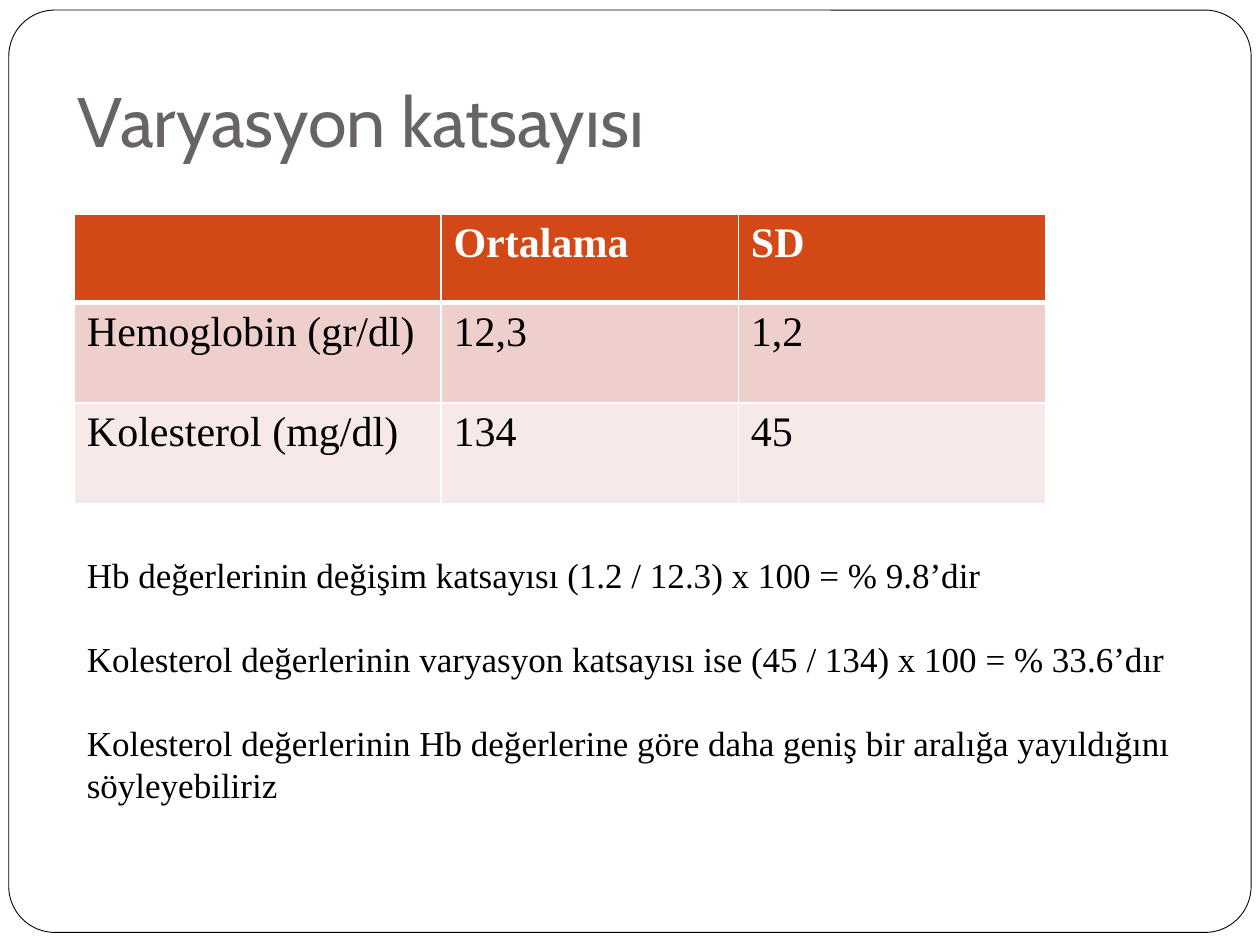
from dataclasses import dataclass

from lxml import etree
from pptx import Presentation
from pptx.dml.color import RGBColor
from pptx.enum import shapes, text
from pptx.oxml import ns
from pptx.util import Inches, Pt


@dataclass(frozen=True)
class Theme:
    white: RGBColor = RGBColor.from_string("FFFFFF")
    black: RGBColor = RGBColor.from_string("000000")
    grey: RGBColor = RGBColor.from_string("696464")
    row_fills: tuple = tuple(map(RGBColor.from_string, ("D34817", "EFCFCC", "F7E9E8")))
    title_font: str = "Cabin"
    body_font: str = "Times New Roman"
    title_size: Pt = Pt(40)
    table_size: Pt = Pt(24)
    body_size: Pt = Pt(20)
    body_leading: Pt = Pt(24)


theme = Theme()


def add_run(p, words, font, size, color, bold=False):
    r = p.add_run()
    r.text = words
    r.font.name, r.font.size, r.font.bold = font, size, bold
    r.font.color.rgb = color


def set_borders(cell, widths):
    """Draw white borders; widths maps the sides L, R, T, B to points."""
    tc_pr = cell._tc.get_or_add_tcPr()
    for i, (side, width) in enumerate(widths.items()):
        ln = etree.Element(ns.qn(f"a:ln{side}"), w=str(Pt(width)))
        fill = etree.SubElement(ln, ns.qn("a:solidFill"))
        etree.SubElement(fill, ns.qn("a:srgbClr"), val=str(theme.white))
        tc_pr.insert(i, ln)


prs = Presentation()
prs.slide_width, prs.slide_height = Inches(10), Inches(7.5)
s = prs.slides.add_slide(prs.slide_layouts[6])

# Rounded frame
frame = s.shapes.add_shape(shapes.MSO_SHAPE.ROUNDED_RECTANGLE,
                           Inches(0.07), Inches(0.08), Inches(9.86), Inches(7.32))
frame.adjustments[0] = 0.05
frame.shadow.inherit = False
frame.fill.solid()
frame.fill.fore_color.rgb = theme.white
frame.line.color.rgb = theme.black
frame.line.width = Pt(0.5)

# Title
title = s.shapes.add_textbox(Inches(0.52), Inches(0.44), Inches(8.5), Inches(0.94))
tf = title.text_frame
tf.word_wrap = True
tf.vertical_anchor = text.MSO_ANCHOR.BOTTOM
tf.margin_bottom = Inches(0.1)
add_run(tf.paragraphs[0], "Varyasyon katsayısı", theme.title_font, theme.title_size, theme.grey)

# Table of means and standard deviations
rows = [
    ("", "Ortalama", "SD"),
    ("Hemoglobin (gr/dl)", "12,3", "1,2"),
    ("Kolesterol (mg/dl)", "134", "45"),
]
table = s.shapes.add_table(3, 3, Inches(0.59), Inches(1.7), Inches(7.71), Inches(2.3)).table
for column, width in zip(table.columns, (2.91, 2.36, 2.44)):
    column.width = Inches(width)
for row, height in zip(table.rows, (0.7, 0.8, 0.8)):
    row.height = Inches(height)
for i, values in enumerate(rows):
    header = i == 0
    for j, value in enumerate(values):
        cell = table.cell(i, j)
        cell.fill.solid()
        cell.fill.fore_color.rgb = theme.row_fills[i]
        set_borders(cell, {"L": 1, "R": 1, "T": 3 if i == 1 else 1, "B": 3 if header else 1})
        if value:
            add_run(cell.text_frame.paragraphs[0], value, theme.body_font, theme.table_size,
                    theme.white if header else theme.black, header)

# Interpretation
notes = [
    "Hb değerlerinin değişim katsayısı (1.2 / 12.3) x 100 = % 9.8’dir",
    "Kolesterol değerlerinin varyasyon katsayısı ise (45 / 134) x 100 = % 33.6’dır",
    "Kolesterol değerlerinin Hb değerlerine göre daha geniş bir aralığa yayıldığını söyleyebiliriz",
]
tf = s.shapes.add_textbox(Inches(0.59), Inches(4.34), Inches(8.98), Inches(2.12)).text_frame
tf.word_wrap = True
for i, note in enumerate(notes):
    p = tf.add_paragraph() if i else tf.paragraphs[0]
    p.line_spacing = theme.body_leading
    if i:
        p.space_before = theme.body_leading
    add_run(p, note, theme.body_font, theme.body_size, theme.black)

prs.save("out.pptx")
